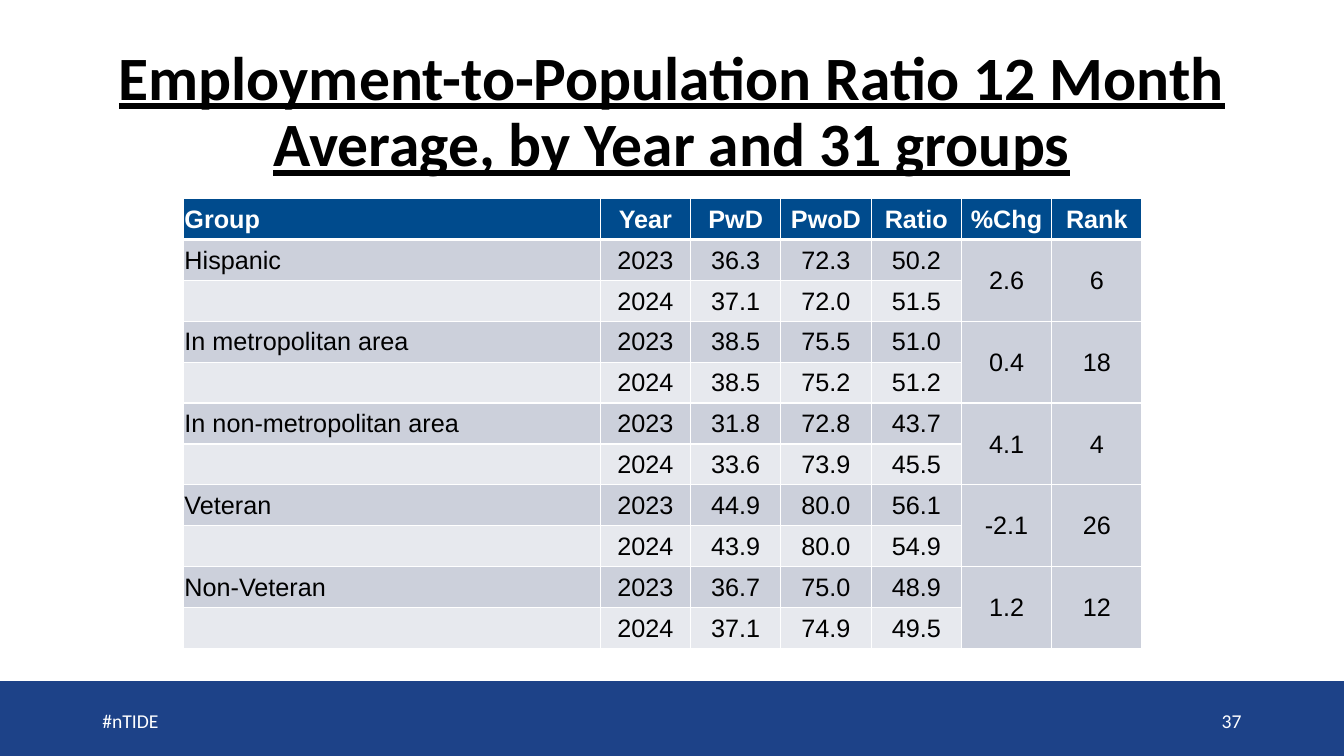
from lxml.etree import SubElement
from pptx import Presentation
from pptx.dml.color import RGBColor
from pptx.enum.shapes import MSO_SHAPE
from pptx.enum.text import MSO_ANCHOR, PP_ALIGN
from pptx.oxml.ns import qn
from pptx.util import Pt

COLORS = {
    "band": "1D4288",
    "header": "004B8D",
    "first_year": "CCD0DB",
    "second_year": "E7E9EE",
    "white": "FFFFFF",
    "black": "000000",
}
HEADINGS = ["Group", "Year", "PwD", "PwoD", "Ratio", "%Chg", "Rank"]
# Group, 2023 figures, 2024 figures, change, rank
GROUPS = [
    ("Hispanic", ["36.3", "72.3", "50.2"], ["37.1", "72.0", "51.5"], "2.6", "6"),
    ("In metropolitan area", ["38.5", "75.5", "51.0"], ["38.5", "75.2", "51.2"], "0.4", "18"),
    ("In non-metropolitan area", ["31.8", "72.8", "43.7"], ["33.6", "73.9", "45.5"], "4.1", "4"),
    ("Veteran", ["44.9", "80.0", "56.1"], ["43.9", "80.0", "54.9"], "-2.1", "26"),
    ("Non-Veteran", ["36.7", "75.0", "48.9"], ["37.1", "74.9", "49.5"], "1.2", "12"),
]
SLIDE_W, SLIDE_H = 960, 540
MARGIN = 66


class SlideBuilder:
    def __init__(self, prs):
        self.s = prs.slides.add_slide(prs.slide_layouts[5])
        self.heading_font = "Calibri"
        self.table_font = "Arial"

    def color(self, name):
        return RGBColor.from_string(COLORS[name])

    def format(self, p, font, size, color, align, bold=False):
        p.alignment = align
        p.font.name = font
        p.font.size = Pt(size)
        p.font.bold = bold
        p.font.color.rgb = self.color(color)

    def title(self, text, left, top, width, height):
        sp = self.s.shapes.title
        sp.left, sp.top, sp.width, sp.height = map(Pt, (left, top, width, height))
        tf = sp.text_frame
        tf.text = text
        tf.word_wrap = True
        tf.vertical_anchor = MSO_ANCHOR.MIDDLE
        p = tf.paragraphs[0]
        p.line_spacing = 0.9
        self.format(p, self.heading_font, 44, "black", PP_ALIGN.CENTER, True)
        p.font.underline = True

    def band(self, top):
        sp = self.s.shapes.add_shape(
            MSO_SHAPE.RECTANGLE, 0, Pt(top), Pt(SLIDE_W), Pt(SLIDE_H - top))
        sp.shadow.inherit = False
        sp.fill.solid()
        sp.fill.fore_color.rgb = self.color("band")
        sp.line.fill.background()

    def footer(self, text, left, align):
        sp = self.s.shapes.add_textbox(Pt(left), Pt(500.5), Pt(216), Pt(28.8))
        tf = sp.text_frame
        tf.text = text
        tf.word_wrap = True
        tf.vertical_anchor = MSO_ANCHOR.MIDDLE
        self.format(tf.paragraphs[0], self.heading_font, 14, "white", align)

    def borders(self, cell, bottom):
        tc_pr = cell._tc.get_or_add_tcPr()
        for side, width in (("L", 1), ("R", 1), ("T", 1), ("B", bottom)):
            ln = SubElement(tc_pr, qn(f"a:ln{side}"), w=str(Pt(width)))
            fill = SubElement(ln, qn("a:solidFill"))
            SubElement(fill, qn("a:srgbClr"), val=COLORS["white"])

    def cell(self, cell, text, fill, header, align):
        cell.text = text
        cell.vertical_anchor = MSO_ANCHOR.MIDDLE
        cell.margin_left = cell.margin_right = cell.margin_top = Pt(0.6)
        cell.margin_bottom = 0
        self.borders(cell, 3 if header else 1)
        cell.fill.solid()
        cell.fill.fore_color.rgb = self.color(fill)
        self.format(cell.text_frame.paragraphs[0], self.table_font, 18,
                    "white" if header else "black", align, header)

    def table(self, rows, left, top, col_widths, row_height):
        """Draw a header row, then pairs of rows whose last two columns are merged."""
        table = self.s.shapes.add_table(
            len(rows), len(col_widths), Pt(left), Pt(top),
            Pt(sum(col_widths)), Pt(row_height * len(rows))).table
        for column, width in zip(table.columns, col_widths):
            column.width = Pt(width)
        for i, row in enumerate(rows):
            table.rows[i].height = Pt(row_height)
            header = i == 0
            fill = "header" if header else "first_year" if i % 2 else "second_year"
            for j, text in enumerate(row):
                align = PP_ALIGN.CENTER if j else PP_ALIGN.LEFT
                self.cell(table.cell(i, j), text, fill, header, align)
        for i in range(1, len(rows), 2):
            for j in (-2, -1):
                col = len(col_widths) + j
                table.cell(i, col).merge(table.cell(i + 1, col))


def main():
    prs = Presentation()
    prs.slide_width, prs.slide_height = Pt(SLIDE_W), Pt(SLIDE_H)
    slide = SlideBuilder(prs)
    slide.band(486.6)
    slide.title("Employment-to-Population Ratio 12 Month Average, by Year and 31 groups",
                MARGIN, 28.75, SLIDE_W - 2 * MARGIN, 104.4)
    rows = [HEADINGS]
    for group, first, second, change, rank in GROUPS:
        rows.append([group, "2023", *first, change, rank])
        rows.append(["", "2024", *second, "", ""])
    slide.table(rows, 131.2, 141.9, [297.6] + [64.5] * 6, 29.2)
    slide.footer("#nTIDE", MARGIN, PP_ALIGN.LEFT)
    slide.footer("37", SLIDE_W - MARGIN - 216, PP_ALIGN.RIGHT)
    prs.save("out.pptx")


if __name__ == "__main__":
    main()
